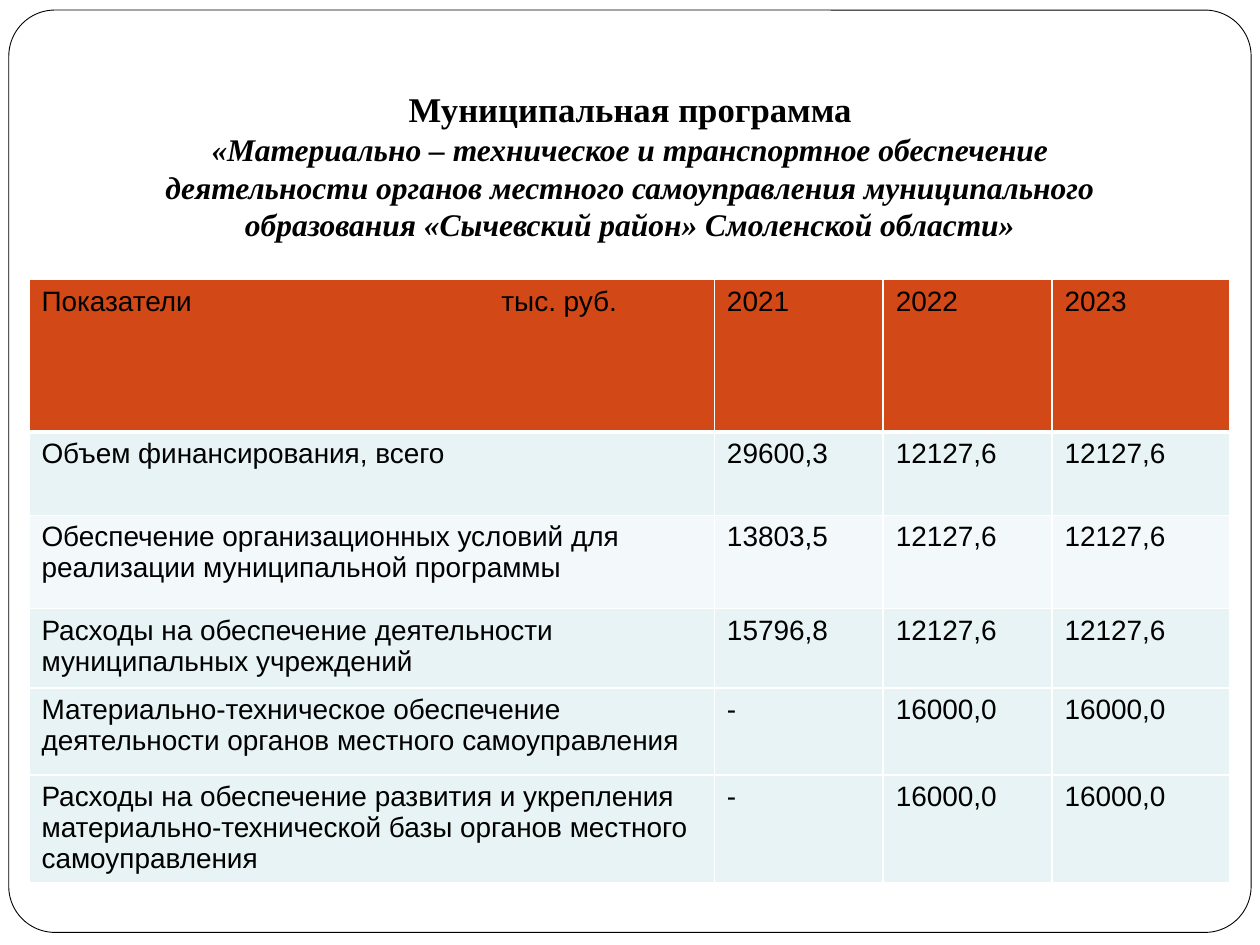
import pptx
import pptx.util
import pptx.dml.color
import pptx.enum.shapes
import pptx.enum.text
from lxml import etree
from pptx.oxml.ns import qn

Inches, Pt = pptx.util.Inches, pptx.util.Pt

# Content
HEADING = "Муниципальная программа"
PROGRAMME = [
    "«Материально – техническое и транспортное обеспечение",
    "деятельности органов местного самоуправления муниципального",
    "образования «Сычевский район» Смоленской области»",
]
ROWS = [
    ("Показатели\tтыс. руб.", "2021", "2022", "2023"),
    ("Объем финансирования, всего", "29600,3", "12127,6", "12127,6"),
    ("Обеспечение организационных условий для реализации муниципальной программы",
     "13803,5", "12127,6", "12127,6"),
    ("Расходы на обеспечение деятельности муниципальных учреждений",
     "15796,8", "12127,6", "12127,6"),
    ("Материально-техническое обеспечение деятельности органов местного самоуправления",
     "-", "16000,0", "16000,0"),
    ("Расходы на обеспечение развития и укрепления материально-технической базы "
     "органов местного самоуправления", "-", "16000,0", "16000,0"),
]
COL_WIDTHS = [5.44, 1.34, 1.34, 1.41]
ROW_HEIGHTS = [1.21, 0.66, 0.74, 0.63, 0.69, 0.86]
ROW_FILLS = ["D34817", "E7F3F4", "F3F9FA", "E7F3F4", "E7F3F4", "E7F3F4"]
UNIT_TAB = 3.65


def rgb(value):
    return pptx.dml.color.RGBColor.from_string(value)


def add_text(p, text, size=16, font="Arial", color="000000", bold=False, italic=False):
    r = p.add_run()
    r.text = text
    f = r.font
    f.size, f.name, f.bold, f.italic = Pt(size), font, bold, italic
    f.color.rgb = rgb(color)


def set_borders(cell, **widths):
    tc_pr = cell._tc.get_or_add_tcPr()
    for i, (side, width) in enumerate(widths.items()):
        ln = etree.Element(qn("a:" + side), w=str(Pt(width)))
        fill = etree.SubElement(ln, qn("a:solidFill"))
        etree.SubElement(fill, qn("a:srgbClr"), val="FFFFFF")
        tc_pr.insert(i, ln)


prs = pptx.Presentation()
prs.slide_width, prs.slide_height = Inches(10), Inches(7.5)
s = prs.slides.add_slide(prs.slide_layouts[5])

# Rounded frame behind everything
frame = s.shapes.add_shape(pptx.enum.shapes.MSO_SHAPE.ROUNDED_RECTANGLE,
                           Inches(0.07), Inches(0.08), Inches(9.86), Inches(7.32))
frame.adjustments[0] = 0.05
frame.shadow.inherit = False
frame.fill.solid()
frame.fill.fore_color.rgb = rgb("FFFFFF")
frame.line.color.rgb = rgb("000000")
frame.line.width = Pt(0.5)
s.shapes._spTree.insert(2, frame._element)

# Title
title = s.shapes.title
title.left, title.top, title.width, title.height = map(Inches, (0.5, 0.3, 9, 1.73))
tf = title.text_frame
tf.word_wrap = True
tf.auto_size = pptx.enum.text.MSO_AUTO_SIZE.NONE
tf.vertical_anchor = pptx.enum.text.MSO_ANCHOR.BOTTOM
tf.margin_bottom = Inches(0.1)
p = tf.paragraphs[0]
add_text(p, HEADING, size=19.8, font="Times New Roman", bold=True)
for line in PROGRAMME:
    p.add_line_break()
    add_text(p, line, size=18, font="Times New Roman", bold=True, italic=True)
p.alignment = pptx.enum.text.PP_ALIGN.CENTER

# Table
table = s.shapes.add_table(len(ROWS), len(COL_WIDTHS), Inches(0.23), Inches(2.22),
                           Inches(sum(COL_WIDTHS)), Inches(sum(ROW_HEIGHTS))).table
for col, width in zip(table.columns, COL_WIDTHS):
    col.width = Inches(width)
for i, (row, height) in enumerate(zip(table.rows, ROW_HEIGHTS)):
    row.height = Inches(height)
    for cell, text in zip(row.cells, ROWS[i]):
        cell.fill.solid()
        cell.fill.fore_color.rgb = rgb(ROW_FILLS[i])
        set_borders(cell, lnL=1, lnR=1, lnT=3 if i == 1 else 1, lnB=3 if i == 0 else 1)
        p = cell.text_frame.paragraphs[0]
        if "\t" in text:
            tabs = etree.SubElement(p._p.get_or_add_pPr(), qn("a:tabLst"))
            etree.SubElement(tabs, qn("a:tab"), pos=str(Inches(UNIT_TAB)), algn="l")
        add_text(p, text)

prs.save("out.pptx")
